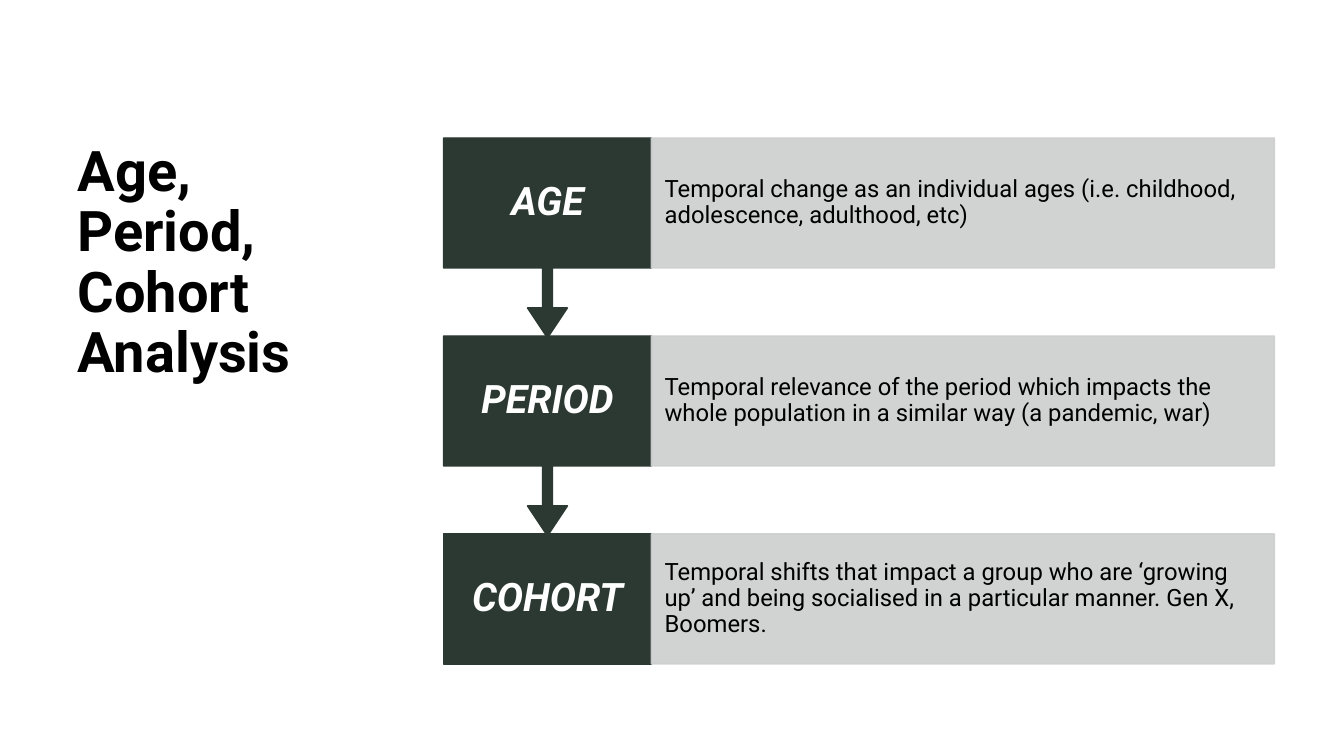
from lxml import etree
from pptx import Presentation
from pptx import util as u
from pptx.dml.color import RGBColor
from pptx.enum import shapes, text
from pptx.oxml import ns

TITLE = "Age, Period, Cohort Analysis"
STEPS = [
    ("AGE", "Temporal change as an individual ages (i.e. childhood, "
            "adolescence, adulthood, etc)"),
    ("PERIOD", "Temporal relevance of the period which impacts the whole "
               "population in a similar way (a pandemic, war)"),
    ("COHORT", "Temporal shifts that impact a group who are ‘growing up’ and "
               "being socialised in a particular manner. Gen X, Boomers."),
]

GREEN = RGBColor(0x2C, 0x39, 0x32)
GREY = RGBColor(0xCD, 0xCE, 0xCE)
WHITE = RGBColor(0xFF, 0xFF, 0xFF)
BLACK = RGBColor(0, 0, 0)

TOP, PITCH, BOX_HEIGHT, CALLOUT_HEIGHT = 98.6, 141.4, 92.8, 142.8
LABEL_LEFT, LABEL_WIDTH, DETAIL_WIDTH = 316.8, 148.5, 445
ARROW = (0.05, 0.1, 0.15, 0.65)  # shaft, head width, head length, box share

TITLE_FONT = {"name": "Roboto", "size": u.Pt(40), "bold": True}
LABEL_FONT = {"name": "Roboto", "size": u.Pt(28), "bold": True, "italic": True}
DETAIL_FONT = {"name": "Roboto", "size": u.Pt(17), "bold": False}


def write(shape, content, font, color, align, anchor, margins):
    """Fill the shape with one paragraph; margins are left, top, right, bottom."""
    frame = shape.text_frame
    frame.text = content
    settings = {"word_wrap": True, "auto_size": text.MSO_AUTO_SIZE.NONE,
                "vertical_anchor": anchor}
    for side, margin in zip(("left", "top", "right", "bottom"), margins):
        settings["margin_" + side] = u.Pt(margin)
    for name, value in settings.items():
        setattr(frame, name, value)
    paragraph = frame.paragraphs[0]
    paragraph.alignment = align
    paragraph.line_spacing = 0.9
    for name, value in font.items():
        setattr(paragraph.runs[0].font, name, value)
    paragraph.runs[0].font.color.rgb = color


def add_box(slide, kind, left, top, width, height, color):
    shape = slide.shapes.add_shape(kind, u.Pt(left), u.Pt(top), u.Pt(width), u.Pt(height))
    shape.shadow.inherit = False
    shape.fill.solid()
    shape.fill.fore_color.rgb = color
    shape.line.color.rgb = color
    shape.line.width = u.Pt(1)
    return shape


def set_opacity(shape, percent):
    """Apply the opacity to both fill and line."""
    for color in shape.element.spPr.iter(ns.qn("a:srgbClr")):
        etree.SubElement(color, ns.qn("a:alpha"), val=str(percent * 1000))


def main():
    presentation = Presentation()
    presentation.slide_width, presentation.slide_height = u.Pt(960), u.Pt(540)
    slide = presentation.slides.add_slide(presentation.slide_layouts[5])

    title = slide.shapes.title
    title.left, title.top = u.Pt(48.2), u.Pt(TOP)
    title.width, title.height = u.Pt(229), u.Pt(375.8)
    write(title, TITLE, TITLE_FONT, BLACK, text.PP_ALIGN.LEFT,
          text.MSO_ANCHOR.TOP, (7.2, 3.6, 10, 3.6))

    for index, (label, detail) in enumerate(STEPS):
        top = TOP + index * PITCH
        is_last = index == len(STEPS) - 1
        kind = (shapes.MSO_SHAPE.RECTANGLE if is_last
                else shapes.MSO_SHAPE.DOWN_ARROW_CALLOUT)
        label_box = add_box(slide, kind, LABEL_LEFT, top, LABEL_WIDTH,
                            BOX_HEIGHT if is_last else CALLOUT_HEIGHT, GREEN)
        if not is_last:
            for position, value in enumerate(ARROW):
                label_box.adjustments[position] = value
        write(label_box, label, LABEL_FONT, WHITE, text.PP_ALIGN.CENTER,
              text.MSO_ANCHOR.MIDDLE, (10.8, 15.8, 10.8, 15.8))

        detail_box = add_box(slide, shapes.MSO_SHAPE.RECTANGLE, LABEL_LEFT + LABEL_WIDTH,
                             top, DETAIL_WIDTH, BOX_HEIGHT, GREY)
        set_opacity(detail_box, 90)
        write(detail_box, detail, DETAIL_FONT, BLACK, text.PP_ALIGN.LEFT,
              text.MSO_ANCHOR.MIDDLE, (9.4, 17.3, 9.4, 17.3))

    presentation.save("out.pptx")


if __name__ == "__main__":
    main()
